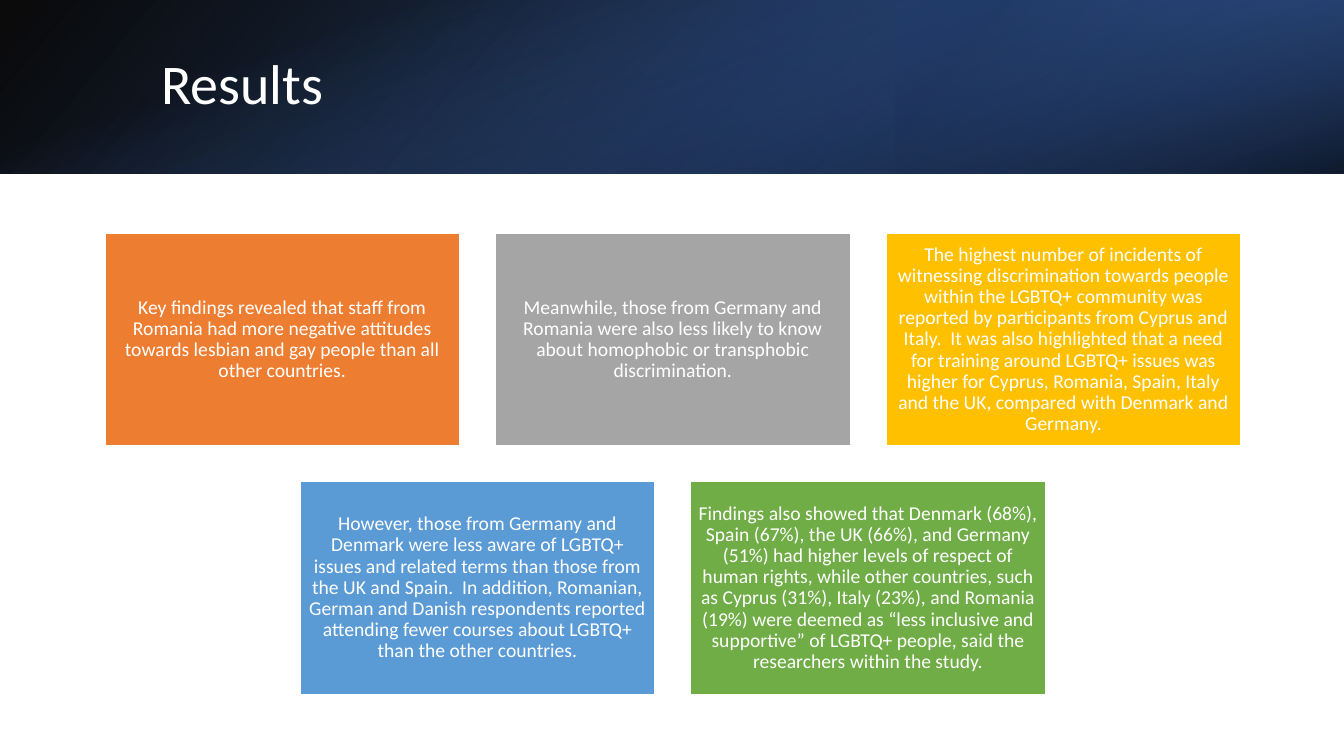
from lxml import etree
from pptx import Presentation
from pptx.dml.color import RGBColor
from pptx.enum.shapes import MSO_SHAPE
from pptx.enum.text import MSO_ANCHOR, PP_ALIGN
from pptx.oxml.ns import qn
from pptx.util import Pt

WHITE = RGBColor(0xFF, 0xFF, 0xFF)
BLACK = RGBColor(0x00, 0x00, 0x00)
BLUE = RGBColor(0x44, 0x72, 0xC4)
DEEP_BLUE = RGBColor(0x2F, 0x55, 0x97)
NAVY = RGBColor(0x20, 0x38, 0x64)
ORANGE = RGBColor(0xED, 0x7D, 0x31)
GRAY = RGBColor(0xA5, 0xA5, 0xA5)
GOLD = RGBColor(0xFF, 0xC0, 0x00)
SKY = RGBColor(0x5B, 0x9B, 0xD5)
GREEN = RGBColor(0x70, 0xAD, 0x47)

SLIDE_W, SLIDE_H = 960, 540
BAND_H = 123.84

prs = Presentation()
prs.slide_width, prs.slide_height = Pt(SLIDE_W), Pt(SLIDE_H)
slide = prs.slides.add_slide(prs.slide_layouts[6])


def add_rectangle(left, top, width, height):
    rectangle = slide.shapes.add_shape(
        MSO_SHAPE.RECTANGLE, Pt(left), Pt(top), Pt(width), Pt(height))
    rectangle.shadow.inherit = False
    return rectangle


def style_text(frame, size):
    """Make the frame's only paragraph white Calibri, centred vertically."""
    frame.word_wrap = True
    frame.vertical_anchor = MSO_ANCHOR.MIDDLE
    paragraph = frame.paragraphs[0]
    paragraph.line_spacing = 0.9
    font = paragraph.runs[0].font
    font.name, font.size, font.color.rgb = "Calibri", Pt(size), WHITE
    return paragraph


# Header band: three translucent gradients; stops are (position, colour, opacity) in percent
HEADER_LAYERS = [
    ((0, 0, SLIDE_W, BAND_H), 0, True, 140,
     [(0, BLACK, 96), (100, DEEP_BLUE, 100)]),
    ((640, 0, 320, BAND_H), 180, True, 320,
     [(19, NAVY, 68), (100, BLUE, 79)]),
    (((SLIDE_W - BAND_H) / 2, (BAND_H - SLIDE_W) / 2, BAND_H, SLIDE_W), 90, False, 340,
     [(23, BLUE, 0), (99, BLACK, 74)]),
]
for box, rotation, flipped, angle, stops in HEADER_LAYERS:
    layer = add_rectangle(*box)
    layer.rotation = rotation
    layer.line.fill.background()
    if flipped:
        layer.element.spPr.find(qn("a:xfrm")).set("flipH", "1")
    layer.fill.gradient()
    gradient = layer.element.spPr.find(qn("a:gradFill"))
    gradient.find(qn("a:lin")).set("ang", str(angle * 60000))
    stop_list = gradient.find(qn("a:gsLst"))
    for old_stop in list(stop_list):
        stop_list.remove(old_stop)
    for position, color, opacity in stops:
        stop = etree.SubElement(stop_list, qn("a:gs"), pos=str(position * 1000))
        stop_color = etree.SubElement(stop, qn("a:srgbClr"), val=str(color))
        etree.SubElement(stop_color, qn("a:alpha"), val=str(opacity * 1000))

title = slide.shapes.add_textbox(Pt(108), Pt(27.4), Pt(790.5), Pt(69))
title.text_frame.text = "Results"
style_text(title.text_frame, 40)

# Findings: rows of equal cards, each row centred
CARD_W, CARD_H, GAP = 253.5, 152, 25.5
ROWS_CENTER, ROWS_TOP = 480.6, 166.5
FINDING_ROWS = [
    [
        (ORANGE, "Key findings revealed that staff from Romania had more negative "
                 "attitudes towards lesbian and gay people than all other countries."),
        (GRAY, "Meanwhile, those from Germany and Romania were also less likely to know "
               "about homophobic or transphobic discrimination."),
        (GOLD, "The highest number of incidents of witnessing discrimination towards "
               "people within the LGBTQ+ community was reported by participants from "
               "Cyprus and Italy.  It was also highlighted that a need for training "
               "around LGBTQ+ issues was higher for Cyprus, Romania, Spain, Italy and "
               "the UK, compared with Denmark and Germany."),
    ],
    [
        (SKY, "However, those from Germany and Denmark were less aware of LGBTQ+ issues "
              "and related terms than those from the UK and Spain.  In addition, "
              "Romanian, German and Danish respondents reported attending fewer courses "
              "about LGBTQ+ than the other countries."),
        (GREEN, "Findings also showed that Denmark (68%), Spain (67%), the UK (66%), and "
                "Germany (51%) had higher levels of respect of human rights, while other "
                "countries, such as Cyprus (31%), Italy (23%), and Romania (19%) were "
                "deemed as “less inclusive and supportive” of LGBTQ+ people, said the "
                "researchers within the study."),
    ],
]
for row, findings in enumerate(FINDING_ROWS):
    row_width = len(findings) * (CARD_W + GAP) - GAP
    row_left = ROWS_CENTER - row_width / 2
    for column, (color, finding) in enumerate(findings):
        card = add_rectangle(row_left + column * (CARD_W + GAP),
                             ROWS_TOP + row * (CARD_H + GAP), CARD_W, CARD_H)
        card.fill.solid()
        card.fill.fore_color.rgb = color
        card.line.color.rgb = WHITE
        card.line.width = Pt(1)
        frame = card.text_frame
        frame.margin_left = frame.margin_right = Pt(4.2)
        frame.margin_top = frame.margin_bottom = Pt(4.2)
        frame.text = finding
        paragraph = style_text(frame, 14)
        paragraph.alignment = PP_ALIGN.CENTER
        paragraph.space_after = Pt(5)

prs.save("out.pptx")
